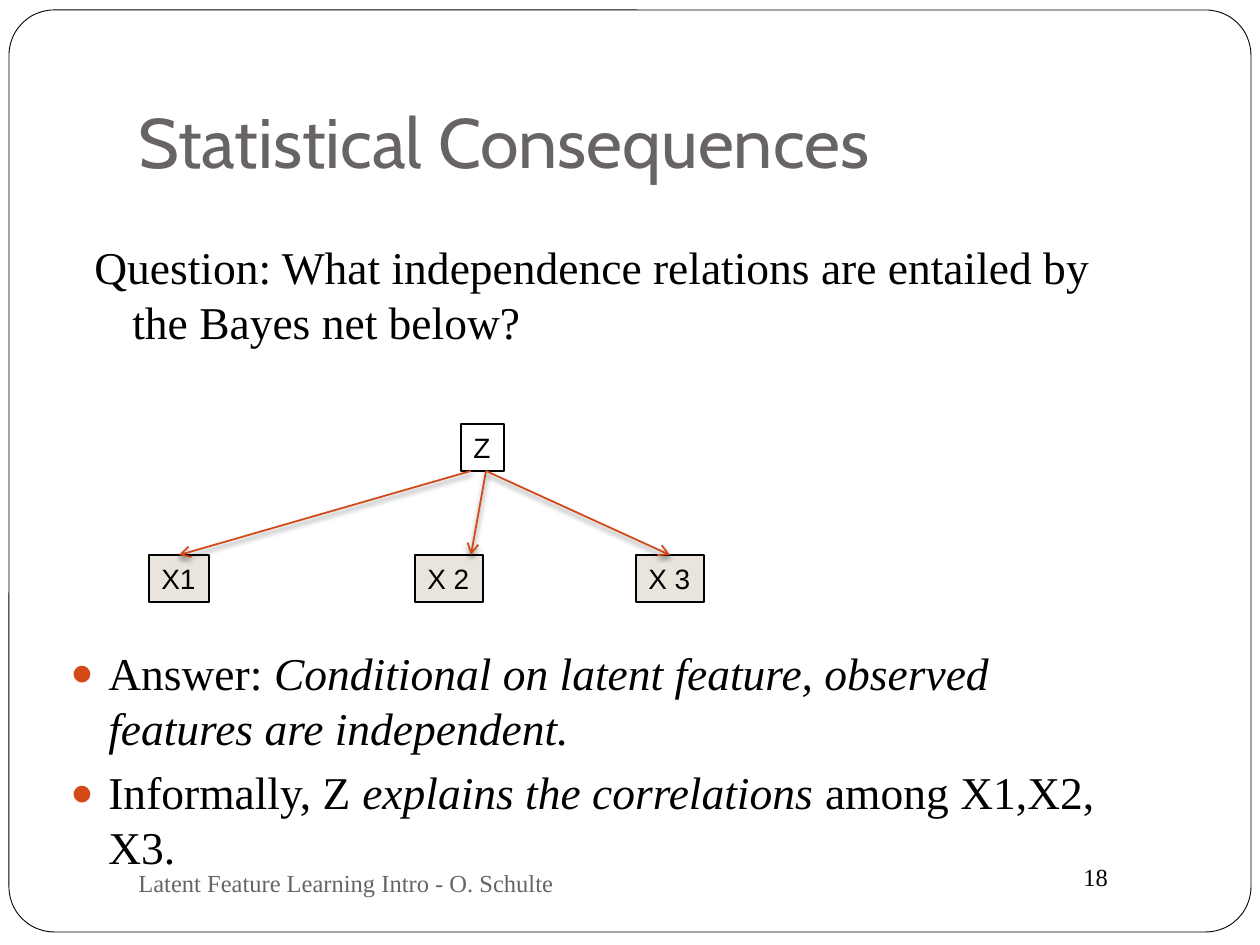
from lxml import etree
from pptx import Presentation
from pptx.dml.color import RGBColor
from pptx.enum.shapes import MSO_CONNECTOR, MSO_SHAPE
from pptx.enum.text import MSO_ANCHOR, MSO_AUTO_SIZE, PP_ALIGN
from pptx.oxml.ns import qn
from pptx.util import Emu, Pt

ROUND_RECT, RECT = MSO_SHAPE.ROUNDED_RECTANGLE, MSO_SHAPE.RECTANGLE
STRAIGHT = MSO_CONNECTOR.STRAIGHT
LEFT = PP_ALIGN.LEFT
TOP, MIDDLE, BOTTOM = MSO_ANCHOR.TOP, MSO_ANCHOR.MIDDLE, MSO_ANCHOR.BOTTOM
NO_FIT = MSO_AUTO_SIZE.NONE

THEME = {
    "white": "FFFFFF", "ink": "000000", "muted": "696464",
    "accent": "D34817", "observed": "E9E5DC",
    "serif": "Times New Roman", "heading": "Cabin", "sans": "Arial",
    "title_pt": 40, "body_pt": 26, "node_pt": 16, "small_pt": 14,
}

# Content: boxes are (left, top, width, height) in px; runs are (text, italic)
TITLE = "Statistical Consequences"
FRAME = (9, 10, 1242, 922)
QUESTION = [[("Question: What independence relations are entailed by "
              "the Bayes net below?", False)]]
ANSWERS = [
    [("Answer: ", False),
     ("Conditional on latent feature, observed features are independent.", True)],
    [("Informally, Z ", False), ("explains the correlations ", True),
     ("among X1,X2, X3.", False)],
]
SMALL_PRINT = [
    ("18", (1071, 856, 126, 43), "ink", TOP),
    ("Latent Feature Learning Intro - O. Schulte", (126, 851, 546, 63), "muted", MIDDLE),
]
NODE_HEIGHT, LATENT_TOP, OBSERVED_TOP = 47, 424, 555
LATENT = ("Z", 461, 43)
OBSERVED = [("X1", 149, 60), ("X 2", 415, 68), ("X 3", 636, 68)]
ARROWS = [(471, 179), (486, 471), (486, 670)]  # x at Z, x at the observed node


def px(n):
    return Emu(round(n * 914400 / 126))


def place(box):
    return [px(n) for n in box]


def colour(name):
    return RGBColor.from_string(THEME[name])


def set_font(paragraph, face, size, ink):
    font = paragraph.font
    font.name, font.size = THEME[face], Pt(THEME[size])
    font.color.rgb = colour(ink)
    paragraph.alignment = LEFT


def add_text(slide, box, paragraphs, size, ink="ink", anchor=TOP):
    frame = slide.shapes.add_textbox(*place(box)).text_frame
    frame.word_wrap, frame.vertical_anchor = True, anchor
    for i, runs in enumerate(paragraphs):
        paragraph = frame.add_paragraph() if i else frame.paragraphs[0]
        set_font(paragraph, "serif", size, ink)
        for text, italic in runs:
            run = paragraph.add_run()
            run.text, run.font.italic = text, italic
    return frame


def style_body(frame, bullet=False):
    for paragraph in frame.paragraphs:
        paragraph.space_before = Pt(5.8)
        props = paragraph._p.get_or_add_pPr()
        props.set("marL", str(px(38)))
        props.set("indent", str(-px(38)))
        if bullet:
            tint = etree.SubElement(props, qn("a:buClr"))
            etree.SubElement(tint, qn("a:srgbClr"), val=THEME["accent"])
            etree.SubElement(props, qn("a:buSzPct"), val="85000")
            etree.SubElement(props, qn("a:buFont"), typeface=THEME["sans"])
            etree.SubElement(props, qn("a:buChar"), char="●")
            # Bullet settings must precede the default run properties
            defaults = props.find(qn("a:defRPr"))
            if defaults is not None:
                props.append(defaults)


def add_box(slide, preset, box, fill, line_pt):
    shape = slide.shapes.add_shape(preset, *place(box))
    shape.shadow.inherit = False
    if fill:
        shape.fill.solid()
        shape.fill.fore_color.rgb = colour(fill)
    else:
        shape.fill.background()
    shape.line.color.rgb, shape.line.width = colour("ink"), Pt(line_pt)
    return shape


def add_node(slide, node, top, fill=None):
    label, left, width = node
    frame = add_box(slide, RECT, (left, top, width, NODE_HEIGHT), fill, 0.75).text_frame
    frame.word_wrap, frame.vertical_anchor = False, TOP
    frame.text = label
    set_font(frame.paragraphs[0], "sans", "node_pt", "ink")


def add_arrow(slide, start_x, end_x):
    arrow = slide.shapes.add_connector(
        STRAIGHT, *place((start_x, LATENT_TOP + NODE_HEIGHT, end_x, OBSERVED_TOP)))
    arrow.line.color.rgb, arrow.line.width = colour("accent"), Pt(1)
    etree.SubElement(arrow.line._get_or_add_ln(), qn("a:tailEnd"), type="arrow")
    effects = etree.SubElement(arrow._element.spPr, qn("a:effectLst"))
    shadow = etree.SubElement(effects, qn("a:outerShdw"), blurRad=str(Pt(3)),
                              dist=str(Pt(2)), dir="5400000", rotWithShape="0")
    tint = etree.SubElement(shadow, qn("a:srgbClr"), val=THEME["ink"])
    etree.SubElement(tint, qn("a:alpha"), val="50000")


def main():
    deck = Presentation()
    deck.slide_width, deck.slide_height = px(1260), px(945)
    slide = deck.slides.add_slide(deck.slide_layouts[5])
    slide.background.fill.solid()
    slide.background.fill.fore_color.rgb = colour("white")

    # Rounded frame, with the title brought in front of it
    add_box(slide, ROUND_RECT, FRAME, "white", 0.5).adjustments[0] = 0.049
    title = slide.shapes.title
    slide.shapes._spTree.append(title._element)
    title.left, title.top, title.width, title.height = place((126, 38, 1071, 158))
    heading = title.text_frame
    heading.text = TITLE
    heading.auto_size, heading.vertical_anchor = NO_FIT, BOTTOM
    heading.margin_bottom = px(13)
    set_font(heading.paragraphs[0], "heading", "title_pt", "muted")

    # Question, answers, page number and footer
    style_body(add_text(slide, (82, 233, 1071, 192), QUESTION, "body_pt"))
    style_body(add_text(slide, (58, 639, 1071, 233), ANSWERS, "body_pt"), bullet=True)
    for text, box, ink, anchor in SMALL_PRINT:
        add_text(slide, box, [[(text, False)]], "small_pt", ink, anchor)

    # Bayes net
    for node in OBSERVED:
        add_node(slide, node, OBSERVED_TOP, "observed")
    add_node(slide, LATENT, LATENT_TOP)
    for start_x, end_x in ARROWS:
        add_arrow(slide, start_x, end_x)

    deck.save("out.pptx")


if __name__ == "__main__":
    main()
